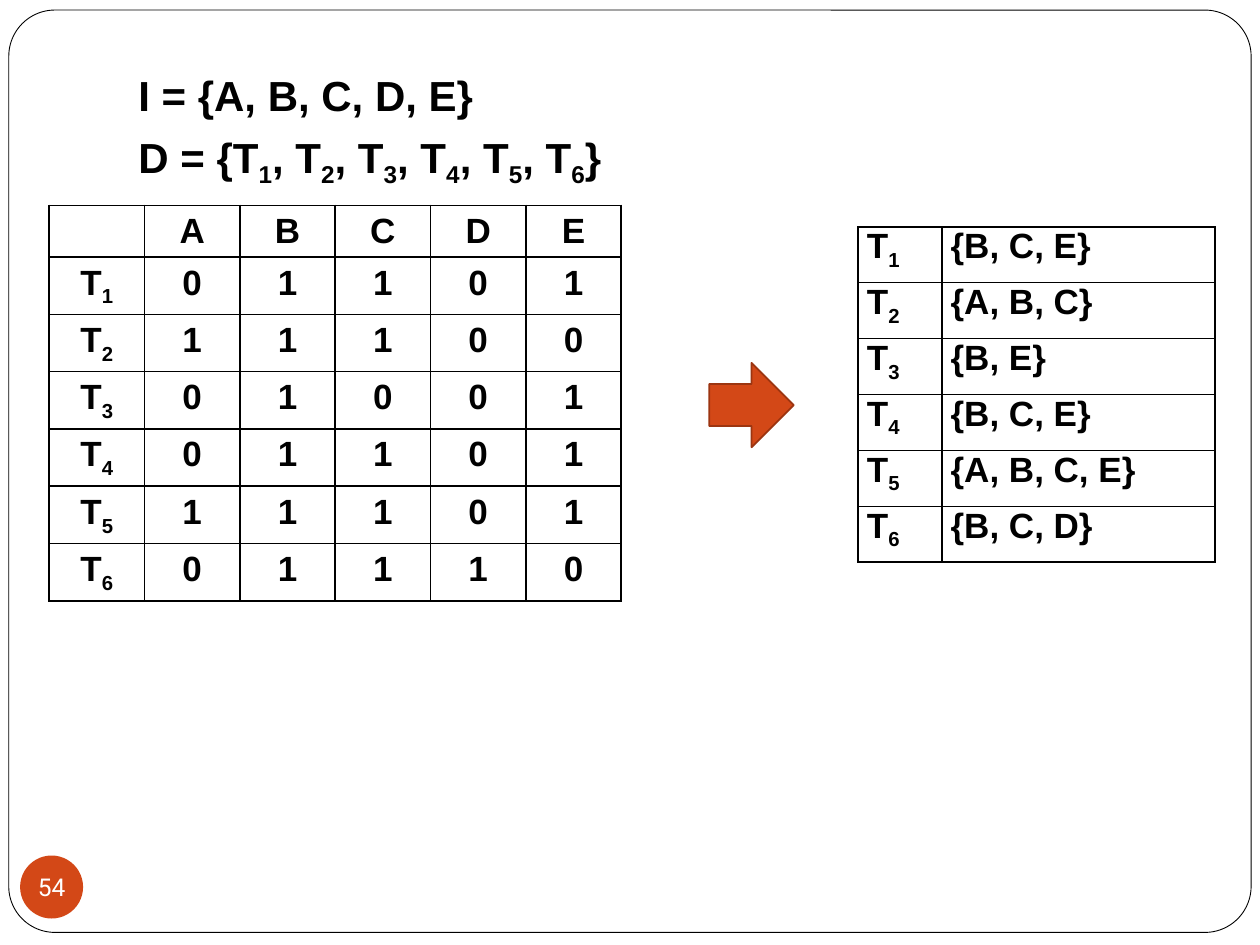
from lxml import etree
from pptx import Presentation
from pptx import util as u
from pptx.dml.color import RGBColor
from pptx.enum import shapes, text
from pptx.oxml import ns

COLORS = {"ink": "000000", "paper": "FFFFFF", "accent": "D34817", "edge": "9C3511"}
UNIT = 0.1  # inches per grid step: the slide has 100 columns and 75 rows
ITEMS = "ABCDE"
TRANSACTIONS = ["BCE", "ABC", "BE", "BCE", "ABCE", "BCD"]
BOLD = {"size": u.Pt(20), "name": "Arial", "bold": True}


def grid(steps):
    return u.Inches(steps * UNIT)


def color(name):
    return RGBColor.from_string(COLORS[name])


class SlideBuilder:
    def __init__(self, presentation):
        self.slide = presentation.slides.add_slide(presentation.slide_layouts[6])

    def add_runs(self, paragraph, content, style, ink="ink"):
        """Add runs to a paragraph; the character after each "_" is a subscript."""
        first, *rest = content.split("_")
        pieces = [(first, False)]
        for part in rest:
            pieces += [(part[0], True), (part[1:], False)]
        for piece, lowered in pieces:
            if not piece:
                continue
            run = paragraph.add_run()
            run.text = piece
            for name, value in style.items():
                setattr(run.font, name, value)
            run.font.color.rgb = color(ink)
            if lowered:
                run.font._element.set("baseline", "-25000")

    def shape(self, kind, box, fill, line=None, line_width=1):
        shape = self.slide.shapes.add_shape(kind, *map(grid, box))
        shape.shadow.inherit = False
        shape.fill.solid()
        shape.fill.fore_color.rgb = color(fill)
        if line:
            shape.line.color.rgb = color(line)
            shape.line.width = u.Pt(line_width)
        else:
            shape.line.fill.background()
        return shape

    def badge(self, box, label):
        frame = self.shape(shapes.MSO_SHAPE.OVAL, box, "accent").text_frame
        settings = {"margin_left": 0, "margin_top": 0, "margin_right": 0,
                    "margin_bottom": 0, "word_wrap": False,
                    "vertical_anchor": text.MSO_ANCHOR.MIDDLE}
        for name, value in settings.items():
            setattr(frame, name, value)
        frame.paragraphs[0].alignment = text.PP_ALIGN.CENTER
        self.add_runs(frame.paragraphs[0], label,
                      {"size": u.Pt(14), "name": "Roboto"}, "paper")

    def text_box(self, box, lines):
        frame = self.slide.shapes.add_textbox(*map(grid, box)).text_frame
        frame.word_wrap = True
        for index, line in enumerate(lines):
            paragraph = frame.add_paragraph() if index else frame.paragraphs[0]
            paragraph.line_spacing = 1.2
            self.add_runs(paragraph, line, {**BOLD, "size": u.Pt(24)})

    def border(self, cell):
        properties = cell._tc.get_or_add_tcPr()
        for side in ("lnL", "lnR", "lnT", "lnB"):
            line = etree.SubElement(properties, ns.qn(f"a:{side}"), w=str(u.Pt(1)))
            fill = etree.SubElement(line, ns.qn("a:solidFill"))
            etree.SubElement(fill, ns.qn("a:srgbClr"), val=COLORS["ink"])

    def table(self, left, top, widths, row_height, rows, alignment, cell_format):
        box = (left, top, sum(widths), row_height * len(rows))
        table = self.slide.shapes.add_table(
            len(rows), len(widths), *map(grid, box)).table
        table.first_row = table.horz_banding = False
        for column, width in zip(table.columns, widths):
            column.width = grid(width)
        for row, values in zip(table.rows, rows):
            row.height = grid(row_height)
            for cell, value in zip(row.cells, values):
                for name, setting in cell_format.items():
                    setattr(cell, name, setting)
                self.border(cell)
                cell.fill.background()
                paragraph = cell.text_frame.paragraphs[0]
                paragraph.alignment = alignment
                self.add_runs(paragraph, value, BOLD)


def main():
    presentation = Presentation()
    presentation.slide_width, presentation.slide_height = grid(100), grid(75)
    builder = SlideBuilder(presentation)
    names = [f"T_{number}" for number in range(1, len(TRANSACTIONS) + 1)]

    # Frame and slide number
    frame = builder.shape(shapes.MSO_SHAPE.ROUNDED_RECTANGLE,
                          (0.7, 0.8, 98.6, 73.2), "paper", "ink", 0.5)
    frame.adjustments[0] = 0.05
    builder.badge((1.6, 67.9, 5, 5), "54")

    # Binary matrix: one row per transaction, one column per item
    matrix = [["", *ITEMS]]
    for name, members in zip(names, TRANSACTIONS):
        matrix.append([name, *(str(int(item in members)) for item in ITEMS)])
    builder.table(3.9, 16.3, [7.57] * 6, 4.1, matrix, text.PP_ALIGN.CENTER, {})

    # The same transactions as item sets
    item_sets = [(name, "{" + ", ".join(members) + "}")
                 for name, members in zip(names, TRANSACTIONS)]
    margins = {"margin_left": grid(0.7), "margin_right": grid(0.7),
               "margin_top": 0, "margin_bottom": 0}
    builder.table(68.1, 18, [6.65, 21.7], 4.44, item_sets,
                  text.PP_ALIGN.LEFT, margins)

    # Arrow from matrix to item sets
    builder.shape(shapes.MSO_SHAPE.RIGHT_ARROW, (56.3, 28.8, 6.7, 6.7),
                  "accent", "edge")

    # Definitions
    builder.text_box((10, 4.2, 40, 10.3),
                     ["I = {" + ", ".join(ITEMS) + "}",
                      "D = {" + ", ".join(names) + "}"])

    presentation.save("out.pptx")


if __name__ == "__main__":
    main()
